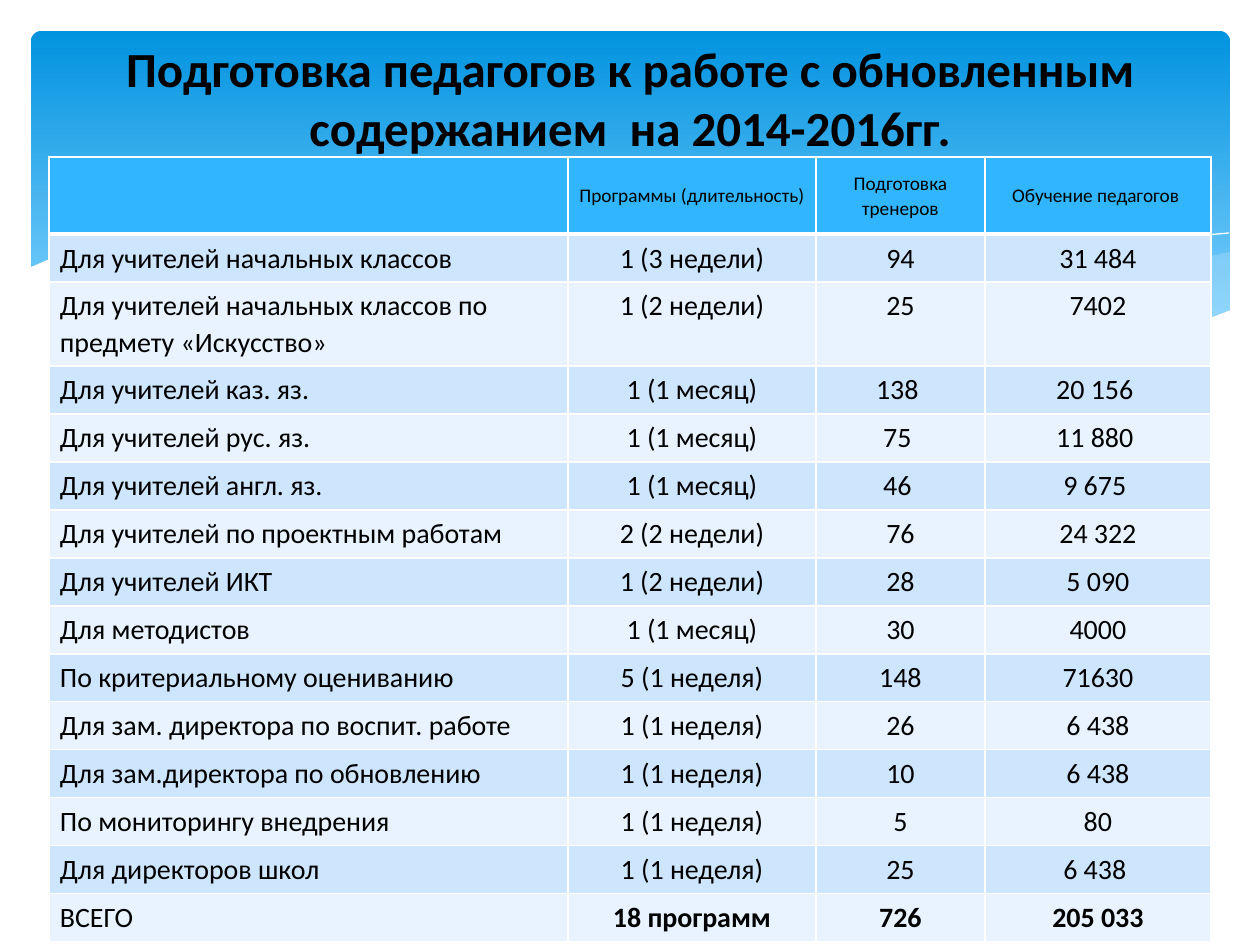
from dataclasses import dataclass
from typing import Optional

from lxml.etree import SubElement
from pptx import Presentation
from pptx.dml.color import RGBColor
from pptx.enum.shapes import MSO_SHAPE
from pptx.enum.text import MSO_ANCHOR, PP_ALIGN
from pptx.oxml.ns import qn
from pptx.util import Emu, Pt

EMU_PER_PX = 914400 / 126
FONT = "Calibri"
BLACK = RGBColor(0x00, 0x00, 0x00)
WHITE = RGBColor(0xFF, 0xFF, 0xFF)
SKY_TOP = RGBColor(0x02, 0x93, 0xE0)
SKY_BOTTOM = RGBColor(0x83, 0xD3, 0xFE)
MIST = RGBColor(0xC6, 0xE7, 0xFC)
HEADER_BLUE = RGBColor(0x31, 0xB6, 0xFD)
BAND_DARK = RGBColor(0xCE, 0xE5, 0xFE)
BAND_LIGHT = RGBColor(0xE8, 0xF3, 0xFF)

TITLE = "Подготовка педагогов к работе с обновленным содержанием  на 2014-2016гг."
HEADINGS = ("", "Программы (длительность)", "Подготовка тренеров", "Обучение педагогов ")
COLUMN_WIDTHS = (519, 248, 169, 226)
HEADER_HEIGHT, ROW_HEIGHT, TALL_ROW_HEIGHT = 77, 48, 84


@dataclass(frozen=True)
class Wave:
    points: tuple[tuple[int, int], ...]
    fill: Optional[RGBColor] = None
    opacity: int = 100


@dataclass(frozen=True)
class Course:
    audience: str
    programs: str
    trainers: str
    teachers: str
    height: int = ROW_HEIGHT
    total: bool = False


WAVES = (
    Wave(((1229, 252), (1194, 260), (1142, 268), (1085, 281), (1014, 298), (949, 313),
          (833, 334), (906, 343), (969, 348), (1026, 350), (1076, 348), (1120, 343),
          (1160, 334), (1196, 323), (1230, 311), (1230, 252)), MIST, 29),
    Wave(((1125, 344), (1055, 334), (977, 320), (890, 302), (793, 280), (736, 266),
          (682, 255), (632, 247), (586, 241), (529, 235), (479, 233), (433, 234),
          (394, 237), (360, 241), (407, 247), (456, 256), (509, 266), (566, 280),
          (668, 302), (757, 321), (838, 335), (910, 345), (970, 349), (1031, 350),
          (1092, 349)), MIST, 40),
    Wave(((389, 246), (433, 239), (488, 236), (545, 236), (616, 239), (701, 248),
          (801, 262), (916, 285), (1047, 316), (1143, 343))),
    Wave(((772, 324), (876, 296), (978, 272), (1091, 251), (1164, 239), (1229, 233))),
    Wave(((1231, 310), (1197, 323), (1159, 334), (1118, 342), (1071, 347), (1019, 349),
          (959, 347), (892, 343), (816, 334), (730, 320), (633, 301), (563, 277),
          (492, 261), (428, 248), (368, 239), (315, 234), (266, 232), (223, 232),
          (184, 233), (150, 236), (120, 241), (96, 246), (74, 251), (58, 256),
          (45, 261), (29, 268), (29, 415), (1231, 415)), WHITE),
)

COURSES = (
    Course("Для учителей начальных классов", "1 (3 недели)", "94", "31 484"),
    Course("Для учителей начальных классов по предмету «Искусство»", "1 (2 недели)",
           "25", "7402", TALL_ROW_HEIGHT),
    Course("Для учителей каз. яз.", "1 (1 месяц)", "138 ", "20 156 "),
    Course("Для учителей рус. яз.", "1 (1 месяц)", "75 ", "11 880 "),
    Course("Для учителей англ. яз.", "1 (1 месяц)", "46 ", "9 675 "),
    Course("Для учителей по проектным работам", "2 (2 недели)", "76", "24 322"),
    Course("Для учителей ИКТ", "1 (2 недели)", "28", "5 090"),
    Course("Для методистов", "1 (1 месяц)", "30", "4000"),
    Course("По критериальному оцениванию", "5 (1 неделя)", "148", "71630"),
    Course("Для зам. директора по воспит. работе", "1 (1 неделя)", "26", "6 438"),
    Course("Для зам.директора по обновлению", "1 (1 неделя)", "10", "6 438"),
    Course("По мониторингу внедрения", "1 (1 неделя)", "5", "80"),
    Course("Для директоров школ", "1 (1 неделя)", "25", "6 438 "),
    Course("ВСЕГО", "18 программ", "726", "205 033", total=True),
)


def px(length: int) -> Emu:
    return Emu(round(length * EMU_PER_PX))


def write(paragraph, text: str, size: int, align: PP_ALIGN, bold: bool = False) -> None:
    paragraph.text = text
    paragraph.alignment = align
    font = paragraph.font
    font.name, font.size, font.bold = FONT, Pt(size), bold
    font.color.rgb = BLACK


def draw_sky(shapes) -> None:
    sky = shapes.add_shape(MSO_SHAPE.ROUNDED_RECTANGLE, px(31), px(31), px(1199), px(340))
    sky.adjustments[0] = 0.03
    sky.shadow.inherit = False
    sky.line.fill.background()
    sky.fill.gradient()
    sky.fill.gradient_angle = 270
    for stop, color, position in zip(sky.fill.gradient_stops, (SKY_TOP, SKY_BOTTOM), (0, 0.9)):
        stop.color.rgb = color
        stop.position = position


def draw_wave(shapes, wave: Wave) -> None:
    builder = shapes.build_freeform(*wave.points[0], scale=EMU_PER_PX)
    builder.add_line_segments(wave.points[1:], close=wave.fill is not None)
    outline = builder.convert_to_shape()
    outline.shadow.inherit = False
    if wave.fill is None:
        outline.fill.background()
        outline.line.color.rgb = WHITE
        outline.line.width = Pt(0)
        return
    outline.line.fill.background()
    outline.fill.solid()
    outline.fill.fore_color.rgb = wave.fill
    if wave.opacity < 100:
        color = outline._element.spPr.find(qn("a:solidFill"))[0]
        SubElement(color, qn("a:alpha"), val=str(wave.opacity * 1000))


def draw_title(shapes) -> None:
    frame = shapes.add_textbox(px(63), px(37), px(1134), px(121)).text_frame
    frame.word_wrap = True
    frame.vertical_anchor = MSO_ANCHOR.MIDDLE
    write(frame.paragraphs[0], TITLE, 28, PP_ALIGN.CENTER, True)


def style_cell(cell, fill: RGBColor, bottom_width: int = 1) -> None:
    cell.margin_left = cell.margin_right = px(11)
    cell.margin_top = cell.margin_bottom = px(5)
    properties = cell._tc.get_or_add_tcPr()
    for side, width in (("L", 1), ("R", 1), ("T", 1), ("B", bottom_width)):
        border = SubElement(properties, qn(f"a:ln{side}"), w=str(Pt(width)))
        SubElement(SubElement(border, qn("a:solidFill")), qn("a:srgbClr"), val=str(WHITE))
    cell.fill.solid()
    cell.fill.fore_color.rgb = fill


def write_cell(cell, text: str, size: int, align: PP_ALIGN, bold: bool = False) -> None:
    paragraph = cell.text_frame.paragraphs[0]
    write(paragraph, text, size, align, bold)
    paragraph.line_spacing = 1.07
    paragraph.space_after = Pt(8)


def draw_courses(shapes) -> None:
    heights = (HEADER_HEIGHT, *(course.height for course in COURSES))
    table = shapes.add_table(len(heights), len(HEADINGS), px(49), px(157),
                             px(sum(COLUMN_WIDTHS)), px(sum(heights))).table
    table.first_row = table.horz_banding = False
    for column, width in zip(table.columns, COLUMN_WIDTHS):
        column.width = px(width)
    for row, height in zip(table.rows, heights):
        row.height = px(height)
    for cell, heading in zip(table.rows[0].cells, HEADINGS):
        style_cell(cell, HEADER_BLUE, 3)
        cell.vertical_anchor = MSO_ANCHOR.MIDDLE
        write_cell(cell, heading, 11, PP_ALIGN.CENTER)
    for number, course in enumerate(COURSES, 1):
        values = (course.audience, course.programs, course.trainers, course.teachers)
        for column, value in enumerate(values):
            cell = table.cell(number, column)
            style_cell(cell, BAND_DARK if number % 2 else BAND_LIGHT)
            align = PP_ALIGN.CENTER if column else PP_ALIGN.LEFT
            write_cell(cell, value, 16, align, course.total and column > 0)


def main() -> None:
    deck = Presentation()
    deck.slide_width, deck.slide_height = px(1260), px(945)
    shapes = deck.slides.add_slide(deck.slide_layouts[6]).shapes
    draw_sky(shapes)
    for wave in WAVES:
        draw_wave(shapes, wave)
    draw_title(shapes)
    draw_courses(shapes)
    deck.save("out.pptx")


if __name__ == "__main__":
    main()
